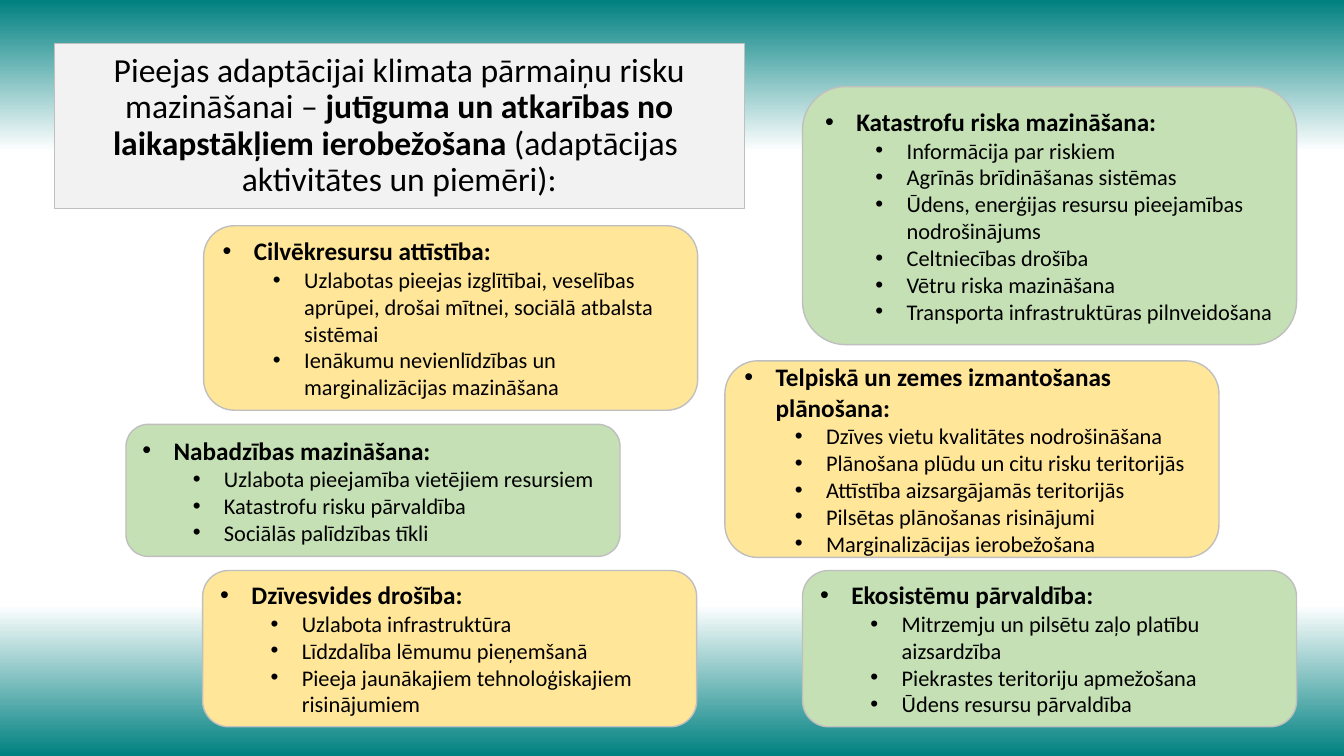
from copy import deepcopy
from dataclasses import dataclass

from lxml import etree
from pptx import Presentation
from pptx.dml.color import RGBColor
from pptx.enum.shapes import MSO_SHAPE
from pptx.enum.text import MSO_ANCHOR, MSO_AUTO_SIZE, PP_ALIGN
from pptx.oxml.ns import qn
from pptx.util import Inches, Pt

ROUNDED = MSO_SHAPE.ROUNDED_RECTANGLE
MIDDLE = MSO_ANCHOR.MIDDLE
NO_AUTOFIT = MSO_AUTO_SIZE.NONE
LEFT, CENTER = PP_ALIGN.LEFT, PP_ALIGN.CENTER


@dataclass(frozen=True)
class Theme:
    font: str = "Calibri"
    ink: str = "000000"
    teal: str = "008080"
    white: str = "FFFFFF"
    gray: str = "F2F2F2"
    border: str = "BFBFBF"
    yellow: str = "FFE699"
    green: str = "C5E0B4"
    title_size: int = 24
    heading_size: int = 18
    item_size: int = 16


THEME = Theme()

# Content: title paragraphs as (text, bold) runs
TITLE = [
    [("Pieejas adaptācijai klimata pārmaiņu risku mazināšanai – ", False),
     ("jutīguma un atkarības no laikapstākļiem ierobežošana ", True),
     ("(adaptācijas ", False)],
    [("aktivitātes un piemēri):", False)],
]
TITLE_AREA = (0.54, 0.43, 6.84, 1.64)

# Content: (left, top, height, fill, heading, items)
APPROACHES = [
    (2.02, 2.24, 1.83, THEME.yellow, "Cilvēkresursu attīstība:", [
        "Uzlabotas pieejas izglītībai, veselības aprūpei, drošai mītnei, "
        "sociālā atbalsta sistēmai",
        "Ienākumu nevienlīdzības un marginalizācijas mazināšana"]),
    (1.25, 4.21, 1.31, THEME.green, "Nabadzības mazināšana:", [
        "Uzlabota pieejamība vietējiem resursiem",
        "Katastrofu risku pārvaldība",
        "Sociālās palīdzības tīkli"]),
    (2.01, 5.66, 1.55, THEME.yellow, "Dzīvesvides drošība:", [
        "Uzlabota infrastruktūra",
        "Līdzdalība lēmumu pieņemšanā",
        "Pieeja jaunākajiem tehnoloģiskajiem risinājumiem"]),
    (7.96, 0.86, 2.56, THEME.green, "Katastrofu riska mazināšana:", [
        "Informācija par riskiem",
        "Agrīnās brīdināšanas sistēmas",
        "Ūdens, enerģijas resursu pieejamības nodrošinājums",
        "Celtniecības drošība",
        "Vētru riska mazināšana",
        "Transporta infrastruktūras pilnveidošana"]),
    (7.96, 5.66, 1.55, THEME.green, "Ekosistēmu pārvaldība:", [
        "Mitrzemju un pilsētu zaļo platību aizsardzība",
        "Piekrastes teritoriju apmežošana",
        "Ūdens resursu pārvaldība"]),
    (7.19, 3.58, 1.95, THEME.yellow, "Telpiskā un zemes izmantošanas plānošana:", [
        "Dzīves vietu kvalitātes nodrošināšana",
        "Plānošana plūdu un citu risku teritorijās",
        "Attīstība aizsargājamās teritorijās",
        "Pilsētas plānošanas risinājumi",
        "Marginalizācijas ierobežošana"]),
]
BOX_WIDTH = 4.9
HANGING, LEVEL_STEP = 0.31, 0.5
BACKGROUND_STOPS = [(0, THEME.teal), (0.2, THEME.white),
                    (0.8, THEME.white), (1, THEME.teal)]


def paint_background(slide):
    fill = slide.background.fill
    fill.gradient()
    fill.gradient_angle = 90
    stop_list = slide.element.find(".//" + qn("a:gsLst"))
    for stop in list(stop_list):
        stop_list.append(deepcopy(stop))
    for stop, (position, color) in zip(fill.gradient_stops, BACKGROUND_STOPS):
        stop.position = position
        stop.color.rgb = RGBColor.from_string(color)


def style_box(box, fill, line_width):
    box.fill.solid()
    box.fill.fore_color.rgb = RGBColor.from_string(fill)
    box.line.color.rgb = RGBColor.from_string(THEME.border)
    box.line.width = Pt(line_width)
    box.shadow.inherit = False
    frame = box.text_frame
    frame.word_wrap = True
    frame.auto_size = NO_AUTOFIT
    frame.vertical_anchor = MIDDLE
    return frame


def add_text(paragraph, text, *, size, bold=False):
    run = paragraph.add_run()
    run.text = text
    run.font.name = THEME.font
    run.font.size = Pt(size)
    run.font.bold = bold
    run.font.color.rgb = RGBColor.from_string(THEME.ink)


def next_paragraph(frame, index):
    return frame.add_paragraph() if index else frame.paragraphs[0]


def set_bullet(paragraph, level):
    paragraph.level = level
    paragraph.alignment = LEFT
    properties = paragraph._p.get_or_add_pPr()
    properties.set("marL", str(Inches(HANGING + level * LEVEL_STEP)))
    properties.set("indent", str(-Inches(HANGING)))
    etree.SubElement(properties, qn("a:buFont")).set("typeface", "Arial")
    etree.SubElement(properties, qn("a:buChar")).set("char", "•")


def add_title(slide):
    title = slide.shapes.title
    title.left, title.top, title.width, title.height = map(Inches, TITLE_AREA)
    outline = etree.SubElement(title.element.spPr, qn("a:prstGeom"), prst="roundRect")
    adjustments = etree.SubElement(outline, qn("a:avLst"))
    etree.SubElement(adjustments, qn("a:gd"), name="adj", fmla="val 18400")
    frame = style_box(title, THEME.gray, 0.75)
    for index, runs in enumerate(TITLE):
        paragraph = next_paragraph(frame, index)
        paragraph.alignment = CENTER
        paragraph.line_spacing = 0.9
        paragraph.space_before = Pt(0)
        for text, bold in runs:
            add_text(paragraph, text, size=THEME.title_size, bold=bold)


def add_approach(slide, left, top, height, fill, heading, items):
    box = slide.shapes.add_shape(ROUNDED, Inches(left), Inches(top),
                                 Inches(BOX_WIDTH), Inches(height))
    frame = style_box(box, fill, 1)
    for index, text in enumerate([heading] + items):
        is_heading = index == 0
        paragraph = next_paragraph(frame, index)
        set_bullet(paragraph, 0 if is_heading else 1)
        add_text(paragraph, text, bold=is_heading,
                 size=THEME.heading_size if is_heading else THEME.item_size)


def main():
    deck = Presentation()
    deck.slide_width, deck.slide_height = Inches(13.33), Inches(7.5)
    slide = deck.slides.add_slide(deck.slide_layouts[5])
    paint_background(slide)
    add_title(slide)
    for approach in APPROACHES:
        add_approach(slide, *approach)
    deck.save("out.pptx")


if __name__ == "__main__":
    main()
